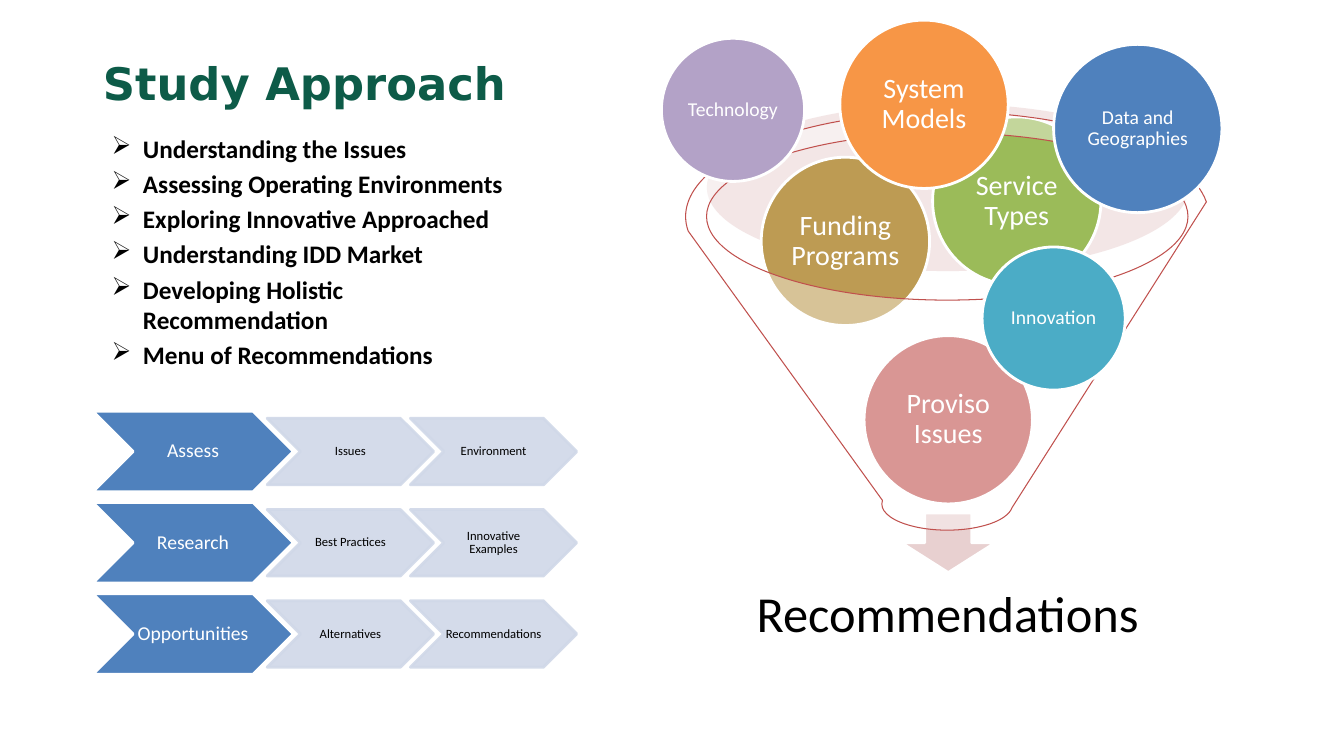
import pptx
import pptx.dml.color
import pptx.enum.shapes
import pptx.enum.text
import pptx.oxml
import pptx.oxml.ns
import pptx.util
from pptx.util import Inches

RGBColor = pptx.dml.color.RGBColor
SHAPE = pptx.enum.shapes.MSO_SHAPE
ANCHOR = pptx.enum.text.MSO_ANCHOR
ALIGN = pptx.enum.text.PP_ALIGN

WHITE = RGBColor(0xFF, 0xFF, 0xFF)
BLACK = RGBColor(0x00, 0x00, 0x00)
GREEN_TITLE = RGBColor(0x0D, 0x5B, 0x48)
BLUE = RGBColor(0x4F, 0x81, 0xBD)
PALE_BLUE = RGBColor(0xD0, 0xD8, 0xE8)
RED = RGBColor(0xC0, 0x50, 0x4D)
PALE_RED = RGBColor(0xE2, 0xC2, 0xC2)
ARROW_RED = RGBColor(0xE8, 0xD0, 0xD0)
GOLD = RGBColor(0xBD, 0x9B, 0x53)
GREEN = RGBColor(0x9B, 0xBB, 0x59)
ORANGE = RGBColor(0xF7, 0x96, 0x46)
PURPLE = RGBColor(0xB3, 0xA2, 0xC7)
TEAL = RGBColor(0x4B, 0xAC, 0xC6)

BIG, SMALL = 1.67, 1.42

BULLETS = [
    "Understanding the Issues",
    "Assessing Operating Environments",
    "Exploring Innovative Approached",
    "Understanding IDD Market",
    "Developing Holistic Recommendation",
    "Menu of Recommendations",
]
CIRCLES_IN_FUNNEL = [
    ("Proviso Issues", 8.57, 3.33, BIG, RED, 20),
    ("Funding Programs", 7.55, 1.56, BIG, GOLD, 20),
    ("Service Types", 9.25, 1.16, BIG, GREEN, 20),
]
CIRCLES_IN_FRONT = [
    ("System Models", 8.33, 0.2, BIG, ORANGE, 20),
    ("Data and Geographies", 10.45, 0.44, BIG, BLUE, 14),
    ("Technology", 6.56, 0.38, SMALL, PURPLE, 14),
    ("Innovation", 9.74, 2.45, SMALL, TEAL, 14),
]
STAGES = [
    ("Assess", "Issues", "Environment"),
    ("Research", "Best Practices", "Innovative Examples"),
    ("Opportunities", "Alternatives", "Recommendations"),
]


def add_run(p, text, size, color, font="Calibri", bold=False):
    r = p.add_run()
    r.text = text
    r.font.name = font
    r.font.size = pptx.util.Pt(size)
    r.font.bold = bold
    r.font.color.rgb = color


def set_alpha(fill, percent):
    color = fill._xPr.find(".//" + pptx.oxml.ns.qn("a:srgbClr"))
    color.append(pptx.oxml.parse_xml(
        f'<a:alpha {pptx.oxml.ns.nsdecls("a")} val="{percent * 1000}"/>'))


def add_figure(s, kind, box, fill, line=WHITE, width=2, alpha=100, line_alpha=100):
    sp = s.shapes.add_shape(kind, *map(Inches, box))
    sp.shadow.inherit = False
    sp.fill.solid()
    sp.fill.fore_color.rgb = fill
    if alpha < 100:
        set_alpha(sp.fill, alpha)
    if line is None:
        sp.line.fill.background()
    else:
        sp.line.color.rgb = line
        sp.line.width = pptx.util.Pt(width)
        if line_alpha < 100:
            set_alpha(sp.line.fill, line_alpha)
    return sp


def add_label(sp, text, size, color, inset):
    tf = sp.text_frame
    tf.word_wrap = True
    tf.vertical_anchor = ANCHOR.MIDDLE
    tf.margin_left = tf.margin_right = Inches(inset)
    tf.margin_top = tf.margin_bottom = Inches(inset)
    p = tf.paragraphs[0]
    p.alignment = ALIGN.CENTER
    p.line_spacing = 0.9
    add_run(p, text, size, color)


def add_circle(s, text, left, top, diameter, fill, size):
    sp = add_figure(s, SHAPE.OVAL, (left, top, diameter, diameter), fill)
    add_label(sp, text, size, WHITE, 0.03)


def add_stage(s, top, stage, *details):
    sp = add_figure(s, SHAPE.CHEVRON, (0.92, top, 1.99, 0.8), BLUE)
    add_label(sp, stage, 14, WHITE, 0.01)
    for i, detail in enumerate(details):
        box = (2.65 + 1.42 * i, top + 0.07, 1.65, 0.66)
        sp = add_figure(s, SHAPE.CHEVRON, box, PALE_BLUE, PALE_BLUE,
                        alpha=90, line_alpha=90)
        add_label(sp, detail, 9, BLACK, 0.01)


def set_title(s):
    sp = s.shapes.title
    sp.left, sp.top, sp.width, sp.height = map(Inches, (0.92, 0.5, 4.3, 1.75))
    sp.text_frame.vertical_anchor = ANCHOR.TOP
    p = sp.text_frame.paragraphs[0]
    p.alignment = ALIGN.LEFT
    add_run(p, "Study Approach", 32, GREEN_TITLE, "DejaVu Sans", True)


def add_bullets(s):
    sp = s.shapes.add_textbox(*map(Inches, (1.01, 1.27, 4.3, 4.17)))
    tf = sp.text_frame
    tf.word_wrap = True
    for i, text in enumerate(BULLETS):
        p = tf.add_paragraph() if i else tf.paragraphs[0]
        pPr = p._p.get_or_add_pPr()
        pPr.set("marL", str(Inches(0.31)))
        pPr.set("indent", str(Inches(-0.31)))
        pPr.append(pptx.oxml.parse_xml(
            f'<a:buChar {pptx.oxml.ns.nsdecls("a")} char="➢"/>'))
        if i:
            p.space_before = pptx.util.Pt(3.6)
        add_run(p, text, 18, BLACK, bold=True)


def add_funnel(s):
    add_figure(s, SHAPE.OVAL, (7.01, 1.03, 4.78, 1.66), PALE_RED, None, alpha=40)
    add_figure(s, SHAPE.DOWN_ARROW, (8.94, 5.09, 0.93, 0.59), ARROW_RED)
    sp = s.shapes.add_textbox(*map(Inches, (7.18, 5.56, 4.44, 1.11)))
    add_label(sp, "Recommendations", 36, BLACK, 0.28)
    for circle in CIRCLES_IN_FUNNEL:
        add_circle(s, *circle)
    add_figure(s, SHAPE.FUNNEL, (6.8, 1.11, 5.19, 4.15), WHITE, RED, 0.75, alpha=40)
    for circle in CIRCLES_IN_FRONT:
        add_circle(s, *circle)


def main():
    prs = pptx.Presentation()
    prs.slide_width, prs.slide_height = Inches(13.33), Inches(7.5)
    s = prs.slides.add_slide(prs.slide_layouts[5])
    set_title(s)
    add_bullets(s)
    add_funnel(s)
    for i, stage in enumerate(STAGES):
        add_stage(s, 4.08 + 0.905 * i, *stage)
    prs.save("out.pptx")


if __name__ == "__main__":
    main()
